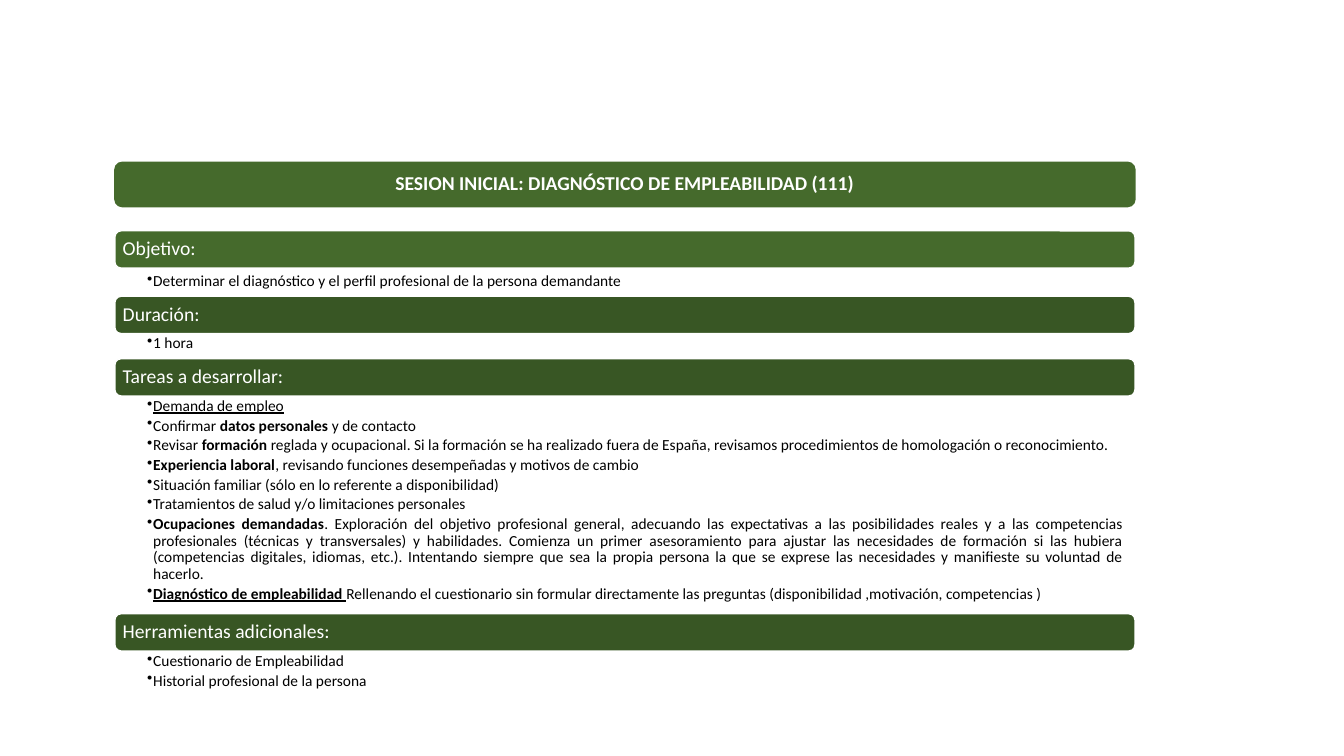
from dataclasses import dataclass

from lxml import etree
from pptx import Presentation
from pptx import util as u
from pptx.dml.color import RGBColor
from pptx.enum import shapes, text
from pptx.oxml import ns

GREEN = RGBColor(0x45, 0x6A, 0x2C)
DARK = RGBColor(0x38, 0x56, 0x24)
WHITE = RGBColor(0xFF, 0xFF, 0xFF)
BLACK = RGBColor(0, 0, 0)
FONT = "Calibri"
LEFT_ALIGN, JUSTIFY = text.PP_ALIGN.LEFT, text.PP_ALIGN.JUSTIFY

WIDE, HIGH = u.Inches(13.33), u.Inches(7.5)
# Percent of the slide's width or height
LEFT, SPAN = 8.55, 75.9
TITLE_TOP, TITLE_TALL = 21.47, 5.87
START, BAR = 30.53, 4.93


@dataclass(frozen=True)
class Run:
    words: str
    bold: bool = False
    under: bool = False


Item = tuple[Run, ...]


@dataclass(frozen=True)
class Section:
    head: str
    fill: RGBColor
    tall: float
    items: tuple[Item, ...]
    gap: float = 0
    align: text.PP_ALIGN = JUSTIFY


def plain(words: str) -> Item:
    return (Run(words),)


SECTIONS = (
    Section("Objetivo:", GREEN, 3.33, (
        plain("Determinar el diagnóstico y el perfil profesional de la persona demandante"),
    ), gap=0.4),
    Section("Duración:", DARK, 3.33, (plain("1 hora"),), align=LEFT_ALIGN),
    Section("Tareas a desarrollar:", DARK, 28.8, (
        (Run("Demanda de empleo", under=True),),
        (Run("Confirmar "), Run("datos personales", bold=True), Run(" y de contacto")),
        (Run("Revisar "), Run("formación", bold=True),
         Run(" reglada y ocupacional. Si la formación se ha realizado fuera de España, "
             "revisamos procedimientos de homologación o reconocimiento.")),
        (Run("Experiencia laboral", bold=True),
         Run(", revisando funciones desempeñadas y motivos de cambio")),
        plain("Situación familiar (sólo en lo referente a disponibilidad)"),
        plain("Tratamientos de salud y/o limitaciones personales"),
        (Run("Ocupaciones demandadas", bold=True),
         Run(". Exploración del objetivo profesional general, adecuando las expectativas "
             "a las posibilidades reales y a las competencias profesionales (técnicas y "
             "transversales) y habilidades. Comienza un primer asesoramiento para ajustar "
             "las necesidades de formación si las hubiera (competencias digitales, idiomas, "
             "etc.). Intentando siempre que sea la propia persona la que se exprese las "
             "necesidades y manifieste su voluntad de hacerlo.")),
        (Run("Diagnóstico de empleabilidad ", bold=True, under=True),
         Run("Rellenando el cuestionario sin formular directamente las preguntas "
             "(disponibilidad ,motivación, competencias )")),
    )),
    Section("Herramientas adicionales:", DARK, 5.47, (
        plain("Cuestionario de Empleabilidad"),
        plain("Historial profesional de la persona"),
    )),
)


def frame(top: float, tall: float) -> tuple[int, int, int, int]:
    """Turn a top and height in percent into a full-span box."""
    return (int(WIDE * LEFT / 100), int(HIGH * top / 100),
            int(WIDE * SPAN / 100), int(HIGH * tall / 100))


def inset(body, left: float, top: float, right: float) -> None:
    body.word_wrap = True
    body.margin_left, body.margin_right = u.Inches(left), u.Inches(right)
    body.margin_top = body.margin_bottom = u.Inches(top)


def style(para, size: float, color: RGBColor, after: float) -> None:
    para.line_spacing = 0.9
    para.space_after = u.Pt(after)
    para.font.name = FONT
    para.font.size = u.Pt(size)
    para.font.color.rgb = color


def bullet(para) -> None:
    props = para._p.get_or_add_pPr()
    props.set("marL", str(u.Inches(0.06)))
    props.set("indent", str(-u.Inches(0.06)))
    etree.SubElement(props, ns.qn("a:buChar"), char="•")


def draw_bar(slide, words: str, top: float, tall: float, fill: RGBColor,
             line: RGBColor, align: text.PP_ALIGN, bold: bool = False) -> None:
    bar = slide.shapes.add_shape(shapes.MSO_SHAPE.ROUNDED_RECTANGLE, *frame(top, tall))
    bar.shadow.inherit = False
    bar.fill.solid()
    bar.fill.fore_color.rgb = fill
    bar.line.color.rgb = line
    bar.line.width = u.Pt(1)
    body = bar.text_frame
    inset(body, 0.06, 0.06, 0.06)
    body.vertical_anchor = text.MSO_ANCHOR.MIDDLE
    para = body.paragraphs[0]
    para.text = words
    para.alignment = align
    style(para, 14, WHITE, 0)
    para.font.bold = bold


def draw_list(slide, part: Section, top: float) -> None:
    body = slide.shapes.add_textbox(*frame(top, part.tall)).text_frame
    inset(body, 0.32, 0.02, 0.11)
    for i, item in enumerate(part.items):
        para = body.add_paragraph() if i else body.paragraphs[0]
        para.level = 1
        para.alignment = part.align
        bullet(para)
        style(para, 11, BLACK, 2.2)
        for bit in item:
            run = para.add_run()
            run.text = bit.words
            if bit.bold:
                run.font.bold = True
            if bit.under:
                run.font.underline = True


def main() -> None:
    deck = Presentation()
    deck.slide_width, deck.slide_height = WIDE, HIGH
    slide = deck.slides.add_slide(deck.slide_layouts[6])
    draw_bar(slide, "SESION INICIAL: DIAGNÓSTICO DE EMPLEABILIDAD (111)",
             TITLE_TOP, TITLE_TALL, GREEN, GREEN, text.PP_ALIGN.CENTER, bold=True)
    top = START
    for part in SECTIONS:
        draw_bar(slide, part.head, top, BAR, part.fill, WHITE, LEFT_ALIGN)
        top += BAR + part.gap
        draw_list(slide, part, top)
        top += part.tall
    deck.save("out.pptx")


if __name__ == "__main__":
    main()
